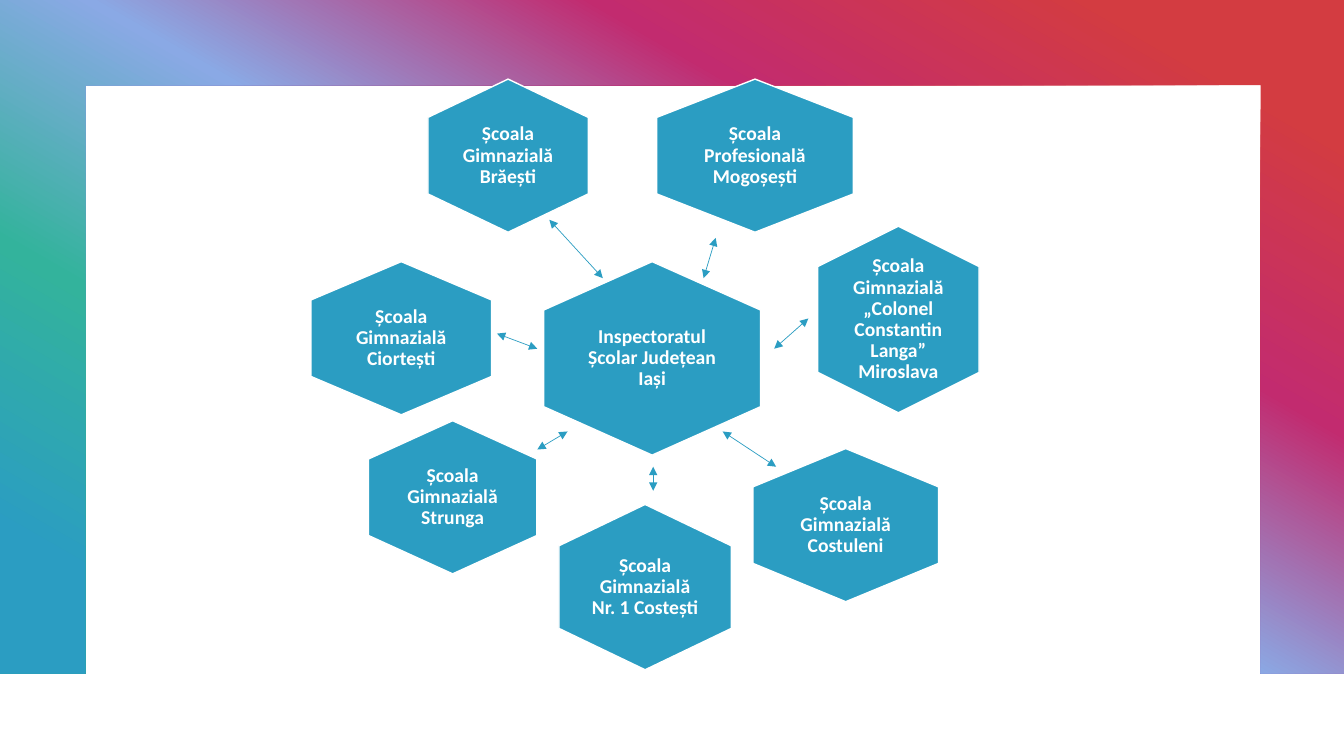
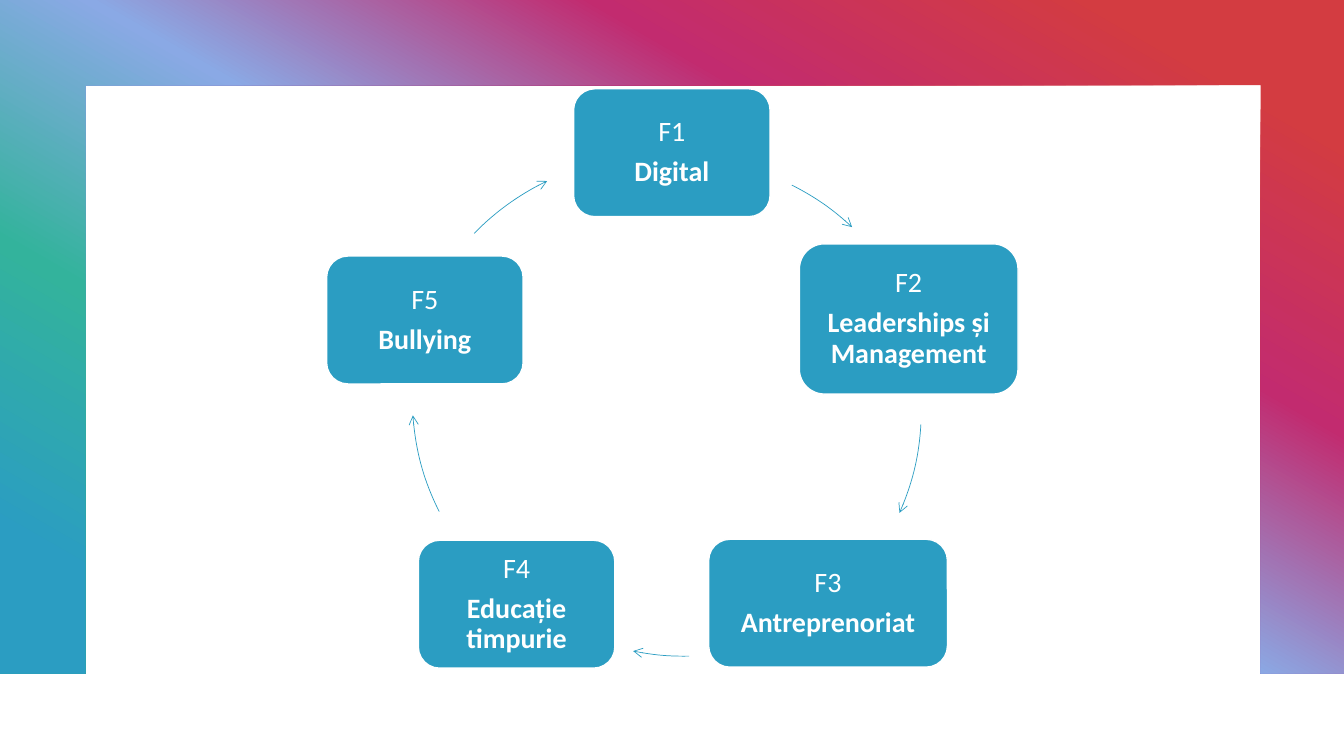
from dataclasses import dataclass

from lxml.etree import SubElement
from pptx import Presentation
from pptx.dml.color import RGBColor
from pptx.enum.shapes import MSO_CONNECTOR, MSO_SHAPE
from pptx.enum.text import MSO_ANCHOR, PP_ALIGN
from pptx.oxml.ns import qn
from pptx.util import Pt

SLIDE_WIDTH, SLIDE_HEIGHT = 960, 540
BLUE, WHITE = "2B9DC2", "FFFFFF"
FRAME_GRADIENT = [(10, "D33C41"), (30, "C22B6F"), (50, "8AA9E5"), (70, "33B39C"), (90, BLUE)]
FRAME_BOTTOM, FRAME_BAND, FRAME_RIGHT = 481, 60.8, 900.4
FONT_NAME = "Calibri"
LINE_WIDTH = 0.5
RING_SIZE = 363.6
CARD_INSET = 5.5


@dataclass
class Hexagon:
    """An upright hexagon, placed by its centre."""
    center_x: float
    center_y: float
    width: float
    height: float
    text: str


@dataclass
class Arrow:
    start_x: float
    start_y: float
    end_x: float
    end_y: float


@dataclass
class Card:
    left: float
    top: float
    width: float
    height: float
    code: str
    topic: str


@dataclass
class RingArc:
    """A clockwise piece of a ring; angles are in degrees from the right."""
    left: float
    top: float
    start_angle: float
    end_angle: float


HEXAGONS = [
    Hexagon(539.3, 111.2, 140.4, 109.4, "Școala Profesională Mogoșești"),
    Hexagon(362.9, 111.2, 114.5, 109.4, "Școala Gimnazială Brăești"),
    Hexagon(465.8, 256, 154.8, 138.2, "Inspectoratul Școlar Județean Iași"),
    Hexagon(641.7, 228.2, 115.2, 133.2,
            "Școala Gimnazială „Colonel Constantin Langa” Miroslava"),
    Hexagon(604.1, 375.1, 132.5, 109.4, "Școala Gimnazială Costuleni"),
    Hexagon(323.3, 355.2, 120.2, 109.4, "Școala Gimnazială Strunga"),
    Hexagon(286.6, 241.6, 128.9, 109.4, "Școala Gimnazială Ciortești"),
    Hexagon(460.8, 419.4, 123.1, 118.1, "Școala Gimnazială Nr. 1 Costești"),
]
ARROWS = [
    Arrow(392.4, 157, 430.6, 198.7),
    Arrow(511.2, 169.9, 502.6, 198.7),
    Arrow(553, 249.1, 577.4, 227.5),
    Arrow(516.2, 308.2, 554.4, 333.4),
    Arrow(466.6, 333.4, 466.6, 350.6),
    Arrow(405.4, 308.2, 383.8, 321.1),
    Arrow(355, 238.3, 383.8, 249.1),
]
CARDS = [
    Card(409.7, 63.4, 140.4, 91.4, "F1", "Digital"),
    Card(571, 174.2, 156.2, 107.3, "F2", "Leaderships și Management"),
    Card(506.2, 385.2, 170.6, 91.4, "F3", "Antreprenoriat"),
    Card(298.8, 385.9, 140.4, 91.4, "F4", "Educație timpurie"),
    Card(233.3, 182.9, 140.4, 91.4, "F5", "Bullying"),
]
RING_ARCS = [
    RingArc(302.4, 113, 296.6, 313.2),
    RingArc(294.5, 110.9, 3.3, 23.9),
    RingArc(306.7, 105.1, 88.8, 101.5),
    RingArc(294.5, 102.2, 153.4, 176),
    RingArc(287.3, 111.6, 224.2, 244.5),
]


def color(hex_value: str) -> RGBColor:
    return RGBColor.from_string(hex_value)


def set_line(shape, hex_value: str, width: float, **arrowheads: str) -> None:
    """Format an outline; arrowheads are headEnd and tailEnd types, in that order."""
    shape.line.color.rgb = color(hex_value)
    shape.line.width = Pt(width)
    outline = shape.element.spPr.find(qn("a:ln"))
    for end, kind in arrowheads.items():
        SubElement(outline, qn(f"a:{end}"), type=kind)


def add_filled_shape(slide, kind, left: float, top: float, width: float, height: float):
    shape = slide.shapes.add_shape(kind, Pt(left), Pt(top), Pt(width), Pt(height))
    shape.shadow.inherit = False
    shape.fill.solid()
    shape.fill.fore_color.rgb = color(BLUE)
    set_line(shape, WHITE, 1)
    return shape


def write_text(shape, lines: list[tuple[str, bool]], size: float, inset: float) -> None:
    """Write centred white paragraphs, each given as text and bold."""
    frame = shape.text_frame
    frame_format = {"word_wrap": True, "vertical_anchor": MSO_ANCHOR.MIDDLE}
    frame_format |= {f"margin_{side}": Pt(inset) for side in ("left", "top", "right", "bottom")}
    for name, value in frame_format.items():
        setattr(frame, name, value)
    for index, (text, bold) in enumerate(lines):
        paragraph = frame.paragraphs[0] if index == 0 else frame.add_paragraph()
        paragraph.alignment = PP_ALIGN.CENTER
        paragraph.line_spacing = 0.9
        paragraph.space_after = Pt(0.35 * size)
        run = paragraph.add_run()
        run.text = text
        for name, value in {"name": FONT_NAME, "size": Pt(size), "bold": bold}.items():
            setattr(run.font, name, value)
        run.font.color.rgb = color(WHITE)


def add_frame_to_layout(layout, slide) -> None:
    """Draw the gradient frame on a slide, then move it behind all else on the layout."""
    points = [
        (SLIDE_WIDTH, 0), (SLIDE_WIDTH, FRAME_BOTTOM), (FRAME_RIGHT, FRAME_BOTTOM),
        (FRAME_RIGHT, FRAME_BAND), (FRAME_BAND, FRAME_BAND),
        (FRAME_BAND, FRAME_BOTTOM), (0, FRAME_BOTTOM),
    ]
    builder = slide.shapes.build_freeform(0, 0)
    builder.add_line_segments([(Pt(x), Pt(y)) for x, y in points], close=True)
    frame = builder.convert_to_shape()
    frame.shadow.inherit = False
    frame.line.fill.background()
    frame.fill.gradient()
    frame.fill.gradient_angle = 240
    stops = frame.element.spPr.find(qn("a:gradFill")).find(qn("a:gsLst"))
    for stop in list(stops):
        stops.remove(stop)
    for position, hex_value in FRAME_GRADIENT:
        stop = SubElement(stops, qn("a:gs"), pos=str(position * 1000))
        SubElement(stop, qn("a:srgbClr"), val=hex_value)
    layout.shapes.element.insert(2, frame.element)


def add_hexagon(slide, hexagon: Hexagon) -> None:
    """Turn a hexagon by 90 degrees and lay level text over it."""
    shape = add_filled_shape(
        slide, MSO_SHAPE.HEXAGON,
        hexagon.center_x - hexagon.height / 2, hexagon.center_y - hexagon.width / 2,
        hexagon.height, hexagon.width)
    shape.rotation = 90
    text_width, text_height = hexagon.width * 2 / 3, hexagon.height * 2 / 3
    label = slide.shapes.add_textbox(
        Pt(hexagon.center_x - text_width / 2), Pt(hexagon.center_y - text_height / 2),
        Pt(text_width), Pt(text_height))
    write_text(label, [(hexagon.text, True)], size=14, inset=0)


def add_arrow(slide, arrow: Arrow) -> None:
    connector = slide.shapes.add_connector(
        MSO_CONNECTOR.STRAIGHT, Pt(arrow.start_x), Pt(arrow.start_y),
        Pt(arrow.end_x), Pt(arrow.end_y))
    set_line(connector, BLUE, LINE_WIDTH, headEnd="triangle", tailEnd="triangle")
    SubElement(connector.element.spPr, qn("a:effectLst"))


def add_card(slide, card: Card) -> None:
    shape = add_filled_shape(
        slide, MSO_SHAPE.ROUNDED_RECTANGLE, card.left, card.top, card.width, card.height)
    write_text(shape, [(card.code, False), (card.topic, True)], size=20, inset=CARD_INSET)


def add_ring_arc(slide, ring_arc: RingArc) -> None:
    shape = slide.shapes.add_shape(
        MSO_SHAPE.ARC, Pt(ring_arc.left), Pt(ring_arc.top), Pt(RING_SIZE), Pt(RING_SIZE))
    for index, angle in enumerate((ring_arc.start_angle, ring_arc.end_angle)):
        shape.adjustments[index] = angle * 0.6  # 60000 units a degree, in 100000ths
    shape.shadow.inherit = False
    shape.fill.background()
    set_line(shape, BLUE, LINE_WIDTH, tailEnd="arrow")


def main() -> None:
    presentation = Presentation()
    presentation.slide_width = Pt(SLIDE_WIDTH)
    presentation.slide_height = Pt(SLIDE_HEIGHT)
    layout = presentation.slide_layouts[6]

    network_slide = presentation.slides.add_slide(layout)
    add_frame_to_layout(layout, network_slide)
    for hexagon in HEXAGONS:
        add_hexagon(network_slide, hexagon)
    for arrow in ARROWS:
        add_arrow(network_slide, arrow)

    cycle_slide = presentation.slides.add_slide(layout)
    for card, ring_arc in zip(CARDS, RING_ARCS):
        add_card(cycle_slide, card)
        add_ring_arc(cycle_slide, ring_arc)

    presentation.save("out.pptx")


if __name__ == "__main__":
    main()
